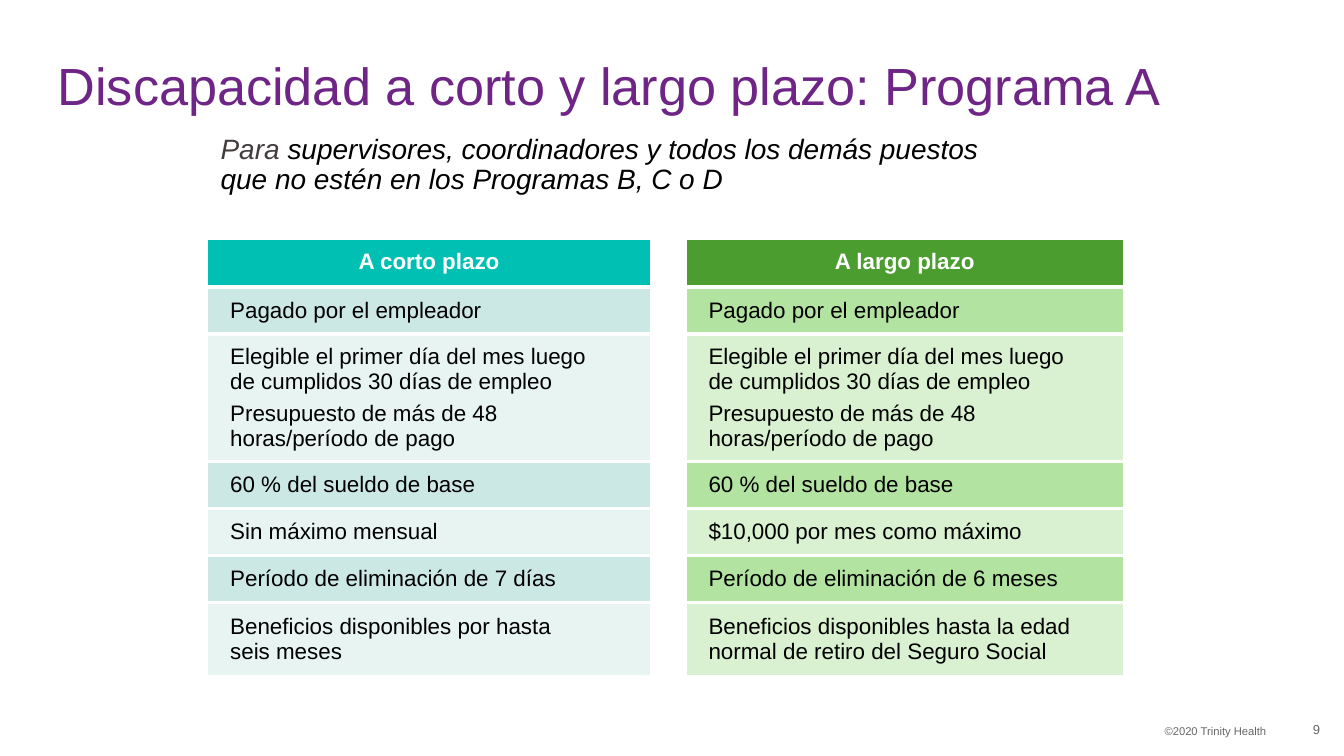
from lxml.etree import SubElement
from pptx import Presentation
from pptx.dml.color import RGBColor
from pptx.enum.text import MSO_ANCHOR as Anchor, PP_ALIGN as Align
from pptx.oxml.ns import qn
from pptx.util import Cm, Pt

WHITE = RGBColor(0xFF, 0xFF, 0xFF)
BLACK = RGBColor(0x00, 0x00, 0x00)
PURPLE = RGBColor(0x6E, 0x25, 0x85)
CHARCOAL = RGBColor(0x44, 0x3D, 0x3E)
GRAY = RGBColor(0x66, 0x66, 0x66)
TEAL = RGBColor(0x00, 0xBF, 0xB3)
TEAL_MID = RGBColor(0xCC, 0xE8, 0xE5)
TEAL_PALE = RGBColor(0xE7, 0xF4, 0xF2)
GREEN = RGBColor(0x4C, 0x9D, 0x2F)
GREEN_MID = RGBColor(0xB2, 0xE3, 0xA1)
GREEN_PALE = RGBColor(0xD9, 0xF1, 0xD0)

PAID = ["Pagado por el empleador"]
ELIGIBLE = [
    "Elegible el primer día del mes luego\nde cumplidos 30 días de empleo",
    "Presupuesto de más de 48 horas/período de pago",
]
SALARY = ["60 % del sueldo de base"]
SHORT_TERM = [
    ["A corto plazo"], PAID, ELIGIBLE, SALARY,
    ["Sin máximo mensual"],
    ["Período de eliminación de 7 días"],
    ["Beneficios disponibles por hasta\nseis meses"],
]
LONG_TERM = [
    ["A largo plazo"], PAID, ELIGIBLE, SALARY,
    ["$10,000 por mes como máximo"],
    ["Período de eliminación de 6 meses"],
    ["Beneficios disponibles hasta la edad normal de retiro del Seguro Social"],
]
COLUMN_WIDTHS = [8.38, 0.66, 8.28]
ROW_HEIGHTS = [0.89, 0.89, 2.41, 0.89, 0.89, 0.89, 1.38]


def style_font(font, size, color):
    """Set the typeface, size and colour of a font."""
    font.name = "Arial"
    font.size = Pt(size)
    font.color.rgb = color


def add_text(page, place, spans, size, align=Align.LEFT, anchor=Anchor.TOP,
             margins=(0.25, 0.13, 0.25, 0.13)):
    """Add a one-paragraph text box made of (text, colour) spans."""
    box = page.shapes.add_textbox(*map(Cm, place))
    frame = box.text_frame
    frame.word_wrap = True
    frame.vertical_anchor = anchor
    (frame.margin_left, frame.margin_top,
     frame.margin_right, frame.margin_bottom) = map(Cm, margins)
    para = frame.paragraphs[0]
    para.alignment = align
    style_font(para.font, size, spans[0][1])
    for text, color in spans:
        span = para.add_run()
        span.text = text
        style_font(span.font, size, color)
    return para


def set_borders(cell, top, bottom):
    """Draw white borders around a cell, with the given top and bottom widths."""
    properties = cell._tc.get_or_add_tcPr()
    widths = {"a:lnL": 1, "a:lnR": 1, "a:lnT": top, "a:lnB": bottom}
    for index, (tag, width) in enumerate(widths.items()):
        line = SubElement(properties, qn(tag), w=str(Pt(width)))
        fill = SubElement(line, qn("a:solidFill"))
        SubElement(fill, qn("a:srgbClr"), val=str(WHITE))
        properties.insert(index, line)


def fill_cell(cell, texts, color, is_header):
    """Write the paragraphs of a plan cell and colour it."""
    cell.fill.solid()
    cell.fill.fore_color.rgb = color
    cell.margin_left = cell.margin_right = Cm(0.18)
    cell.margin_top = cell.margin_bottom = Cm(0.18)
    cell.vertical_anchor = Anchor.TOP if is_header else Anchor.MIDDLE
    frame = cell.text_frame
    for index, text in enumerate(texts):
        para = frame.add_paragraph() if index else frame.paragraphs[0]
        para.text = text
        para.space_after = Pt(2)
        if index:
            para.space_before = Pt(2)
        if is_header:
            para.alignment = Align.CENTER
        else:
            para._p.get_or_add_pPr().set("marL", str(Cm(0.25)))
        style_font(para.font, 12, WHITE if is_header else BLACK)
        para.font.bold = is_header


def clear_gap(cell):
    """Leave a cell of the gap column unfilled and without margins."""
    cell.fill.background()
    cell.margin_left = cell.margin_right = Cm(0)
    cell.margin_top = cell.margin_bottom = Cm(0)
    cell.text_frame.paragraphs[0].font.size = Pt(12)


def add_plan_table(page):
    """Add the table that compares the two plans."""
    rows, columns = len(ROW_HEIGHTS), len(COLUMN_WIDTHS)
    table = page.shapes.add_table(
        rows, columns, Cm(3.92), Cm(4.53),
        Cm(sum(COLUMN_WIDTHS)), Cm(sum(ROW_HEIGHTS))).table
    table.first_row = table.horz_banding = False
    for column, width in zip(table.columns, COLUMN_WIDTHS):
        column.width = Cm(width)
    for row, height in zip(table.rows, ROW_HEIGHTS):
        row.height = Cm(height)
    plans = [(0, SHORT_TERM, TEAL, (TEAL_PALE, TEAL_MID)),
             (2, LONG_TERM, GREEN, (GREEN_PALE, GREEN_MID))]
    for column, plan, header_color, bands in plans:
        for row, texts in enumerate(plan):
            color = bands[row % 2] if row else header_color
            fill_cell(table.cell(row, column), texts, color, row == 0)
    for row in range(rows):
        clear_gap(table.cell(row, 1))
        for column in range(columns):
            set_borders(table.cell(row, column), 2.25 if row else 1,
                        2.25 if row < rows - 1 else 1)


def main():
    """Build the slide and save it."""
    deck = Presentation()
    deck.slide_width, deck.slide_height = Cm(25.4), Cm(14.29)
    page = deck.slides.add_slide(deck.slide_layouts[6])
    add_plan_table(page)
    add_text(page, (23.83, 13.41, 1.12, 0.76), [("9", GRAY)], 7,
             Align.RIGHT, Anchor.MIDDLE, (0.25, 0.13, 0, 0.13))
    add_text(page, (13.54, 13.56, 10.64, 0.51),
             [("©2020 Trinity Health", GRAY)], 6, Align.RIGHT)
    title = add_text(page, (1.09, 0.97, 22.86, 1.4),
                     [("Discapacidad a corto y largo plazo: Programa A", PURPLE)],
                     28, anchor=Anchor.MIDDLE, margins=(0, 0, 0, 0))
    title.line_spacing = 0.9
    subtitle = add_text(page, (3.92, 2.44, 15.85, 1.4), [
        ("Para ", CHARCOAL),
        ("supervisores, coordinadores y todos los demás puestos "
         "que no estén en los Programas B, C o D", BLACK)], 15)
    subtitle.line_spacing = Pt(15.8)
    subtitle.space_after = Pt(4.5)
    subtitle.font.italic = True
    for span in subtitle.runs:
        span.font.italic = True
    deck.save("out.pptx")


if __name__ == "__main__":
    main()
